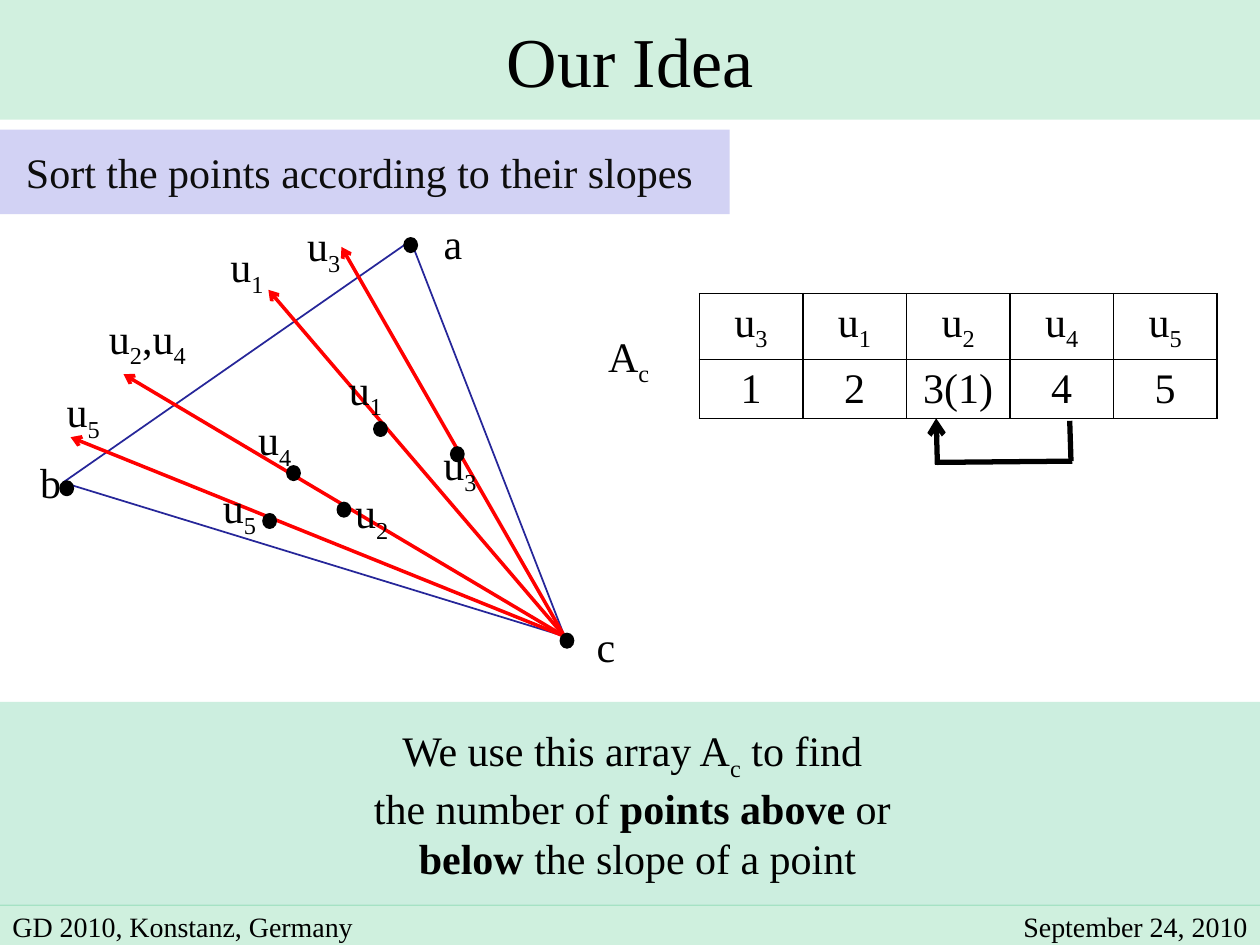
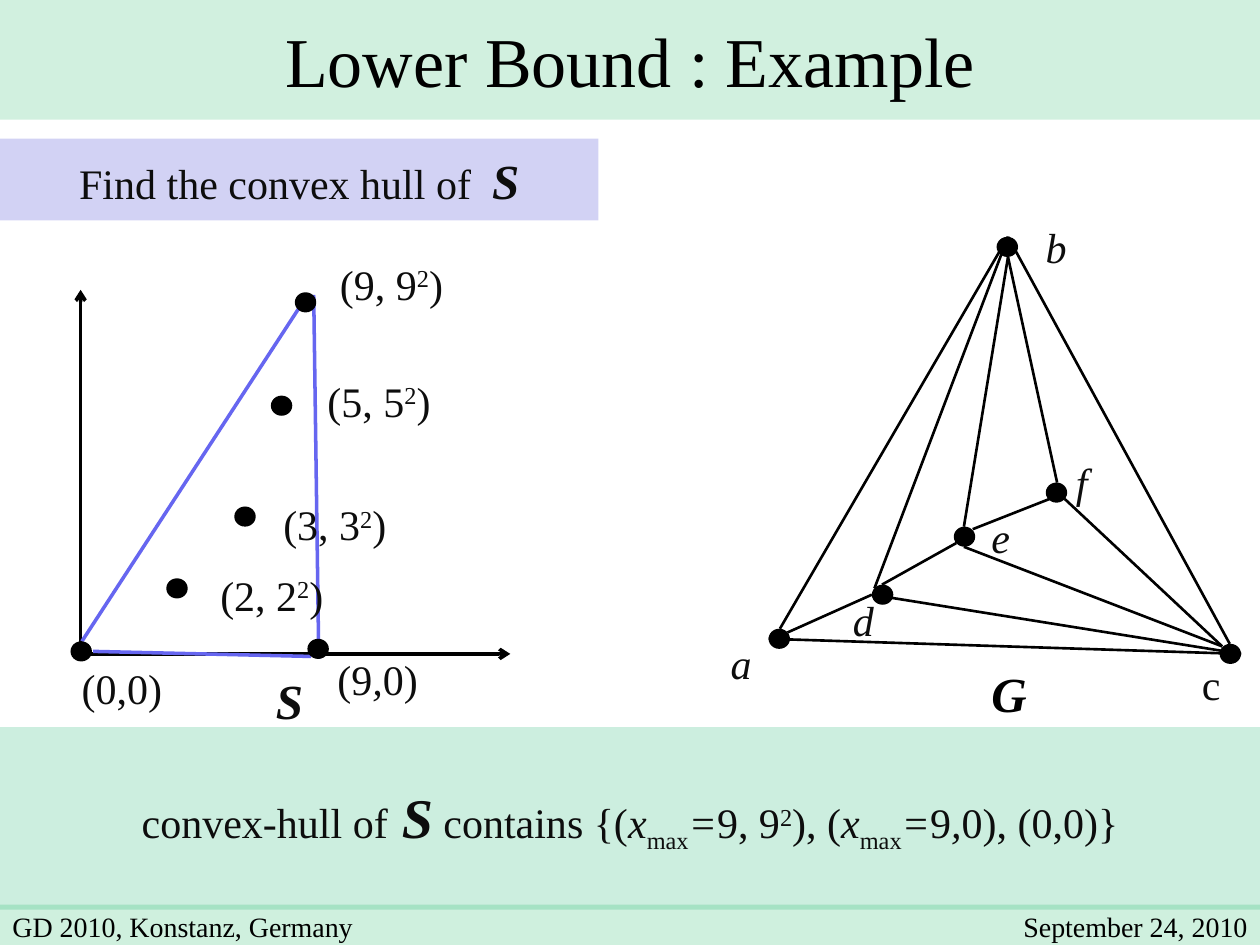
from lxml import etree
from pptx import Presentation
from pptx.dml.color import RGBColor
from pptx.enum.shapes import MSO_CONNECTOR, MSO_SHAPE
from pptx.enum.text import MSO_ANCHOR, MSO_AUTO_SIZE, PP_ALIGN
from pptx.oxml.ns import qn
from pptx.util import Emu, Inches, Pt

LEFT, CENTER, RIGHT = PP_ALIGN.LEFT, PP_ALIGN.CENTER, PP_ALIGN.RIGHT
TOP, MIDDLE = MSO_ANCHOR.TOP, MSO_ANCHOR.MIDDLE
FIT_SHAPE, NO_FIT = MSO_AUTO_SIZE.SHAPE_TO_FIT_TEXT, MSO_AUTO_SIZE.NONE
RECTANGLE, ELLIPSE = MSO_SHAPE.RECTANGLE, MSO_SHAPE.OVAL
STRAIGHT = MSO_CONNECTOR.STRAIGHT

COLORS = {
    "black": "000000",
    "ink": "0D0D0D",
    "green": "00B050",
    "mint": "CCEEDF",
    "lavender": "D2D2F4",
    "ray": "FF0000",
    "triangle": "262699",
    "hull": "6666F0",
}
FONT = "Times New Roman"
COLUMNS, ROWS = 100, 75
TITLE_ONLY = 5
BASELINES = {"_": "-25000", "^": "30000"}


def rgb(name):
    return RGBColor.from_string(COLORS[name])


def write_text(frame, text, size=24, big=28, color="black", align=CENTER,
               anchor=MIDDLE, wrap=True, fit=NO_FIT, italic=False, indent=0):
    """Fill a frame; newlines part paragraphs and | parts runs.

    A run may start with a mark: _ lowered, ^ raised, * bold, / italic,
    ! bold italic in the big size.
    """
    frame.word_wrap, frame.auto_size = wrap, fit
    frame.vertical_anchor = anchor
    for number, line in enumerate(text.split("\n")):
        paragraph = frame.add_paragraph() if number else frame.paragraphs[0]
        paragraph.alignment = align
        if indent:
            paragraph._p.get_or_add_pPr().set("marL", str(Inches(indent)))
        for piece in line.split("|"):
            mark = piece[0] if piece[0] in "_^*/!" else ""
            run = paragraph.add_run()
            run.text = piece[len(mark):]
            font = run.font
            font.name, font.size = FONT, Pt(big if mark == "!" else size)
            font.color.rgb = rgb(color)
            font.bold = mark in ("*", "!")
            font.italic = italic or mark in ("/", "!")
            if mark in BASELINES:
                run._r.get_or_add_rPr().set("baseline", BASELINES[mark])


def paint(shape, color, opacity=None):
    shape.fill.solid()
    shape.fill.fore_color.rgb = rgb(color)
    if opacity:
        tint = shape._element.spPr.find(qn("a:solidFill"))[0]
        etree.SubElement(tint, qn("a:alpha")).set("val", str(opacity * 1000))


class Deck:
    """Shared style plus the current slide; lengths are in grid cells."""

    def __init__(self):
        self.presentation = Presentation()
        self.presentation.slide_width = Inches(10)
        self.presentation.slide_height = Inches(7.5)
        self.column = self.presentation.slide_width / COLUMNS
        self.row = self.presentation.slide_height / ROWS
        self.slide = None

    def cells(self, *lengths):
        """Turn alternating column and row counts into EMU."""
        return [Emu(round(length * (self.row if i % 2 else self.column)))
                for i, length in enumerate(lengths)]

    def start_slide(self, title):
        layout = self.presentation.slide_layouts[TITLE_ONLY]
        self.slide = self.presentation.slides.add_slide(layout)
        heading = self.slide.shapes.title
        (heading.left, heading.top,
         heading.width, heading.height) = self.cells(0, 0, COLUMNS, 9.5)
        paint(heading, "green", 18)
        write_text(heading.text_frame, title, size=40, wrap=False)

    def footer(self):
        self.block(RECTANGLE, (0, 71.8, COLUMNS, 3.2), "green", opacity=19)
        self.label("GD 2010, Konstanz, Germany", 0, 71, 31.1, 5.1,
                   size=16, align=LEFT)
        self.label("September 24, 2010", 77.7, 71, 22.3, 5.1,
                   size=16, align=RIGHT)

    def block(self, kind, box, fill, opacity=None, outline=0):
        shape = self.slide.shapes.add_shape(kind, *self.cells(*box))
        shape.shadow.inherit = False
        paint(shape, fill, opacity)
        if outline:
            shape.line.color.rgb = rgb(fill)
            shape.line.width = Pt(outline)
        else:
            shape.line.fill.background()
        return shape

    def band(self, text, box, fill, **text_format):
        panel = self.block(RECTANGLE, box, fill)
        write_text(panel.text_frame, text, **text_format)

    def dots(self, corners, width, height, outline=0):
        for corner in corners:
            self.block(ELLIPSE, (*corner, width, height), "black",
                       outline=outline)

    def label(self, text, left, top, width, height, **text_format):
        box = self.slide.shapes.add_textbox(
            *self.cells(left, top, width, height))
        write_text(box.text_frame, text, **text_format)

    def tag(self, text, left, top, width, height=5.1, **text_format):
        """A one-line label that grows from its top left corner."""
        style = {"color": "ink", "align": LEFT, "anchor": TOP,
                 "wrap": False, "fit": FIT_SHAPE, **text_format}
        self.label(text, left, top, width, height, **style)

    def line(self, start, end, color="black", width=1.5, arrow=False):
        link = self.slide.shapes.add_connector(
            STRAIGHT, *self.cells(*start, *end))
        link.line.color.rgb = rgb(color)
        link.line.width = Pt(width)
        if arrow:
            stroke = link.line._get_or_add_ln()
            etree.SubElement(stroke, qn("a:tailEnd")).set("type", "arrow")
        etree.SubElement(link._element.spPr, qn("a:effectLst"))

    def polygon(self, corners, color, width):
        first, *others = [self.cells(*corner) for corner in corners]
        builder = self.slide.shapes.build_freeform(*first)
        builder.add_line_segments(others, close=True)
        outline = builder.convert_to_shape()
        outline.shadow.inherit = False
        outline.fill.background()
        outline.line.color.rgb = rgb(color)
        outline.line.width = Pt(width)

    def table(self, rows, left, top, width, heights):
        frame = self.slide.shapes.add_table(
            len(rows), len(rows[0]),
            *self.cells(left, top, width, sum(heights)))
        grid = frame.table
        grid.first_row = grid.horz_banding = False
        for row, height, texts in zip(grid.rows, heights, rows):
            row.height = self.cells(0, height)[1]
            for cell, text in zip(row.cells, texts):
                write_cell(cell, text)


def write_cell(cell, text):
    write_text(cell.text_frame, text)
    cell.vertical_anchor = TOP
    properties = cell._tc.get_or_add_tcPr()
    for side in ("lnL", "lnR", "lnT", "lnB"):
        border = etree.SubElement(properties, qn(f"a:{side}"))
        border.set("w", str(Pt(1)))
        fill = etree.SubElement(border, qn("a:solidFill"))
        etree.SubElement(fill, qn("a:srgbClr")).set("val", COLORS["black"])
    cell.fill.background()


def build_idea(deck):
    deck.start_slide("Our Idea")
    apex = (44.8, 50.5)
    deck.polygon([(5, 38.3), (32.6, 19.1), apex], "triangle", 1)
    for ray_end in [(27.1, 19.6), (9.8, 29.7), (5.6, 34.7), (21.3, 23)]:
        deck.line(apex, ray_end, "ray", 2, arrow=True)
    deck.dots([(32.1, 18.9), (44.5, 50.3), (4.8, 38.2), (22.8, 37),
               (35.8, 35.5), (20.9, 40.8), (29.7, 33.5), (26.8, 39.9)],
              1, 1.1, outline=1.25)

    point_labels = [(1, 26.4, 29.4), (2, 26.9, 39.2), (3, 33.9, 35.4),
                    (4, 19.2, 33.4), (5, 16.4, 38.8)]
    ray_labels = [(1, 17, 19.7), (5, 4, 31.2), (3, 23.1, 18)]
    for index, left, top in point_labels + ray_labels:
        deck.label(f"u|_{index}", left, top, 5.2, 3.4)
    deck.label("u|_2|,u|_4", 6.9, 24.5, 9.6, 5.1)
    deck.label("a", 34.3, 18.3, 1.9, 1.9)
    deck.label("b", 2.2, 37.3, 2, 1.9)
    deck.label("c", 46.1, 50, 4, 2.5)

    deck.label("A|_c", 44.5, 23.4, 10.8, 10.2)
    deck.table([[f"u|_{index}" for index in (3, 1, 2, 4, 5)],
                ["1", "2", "3(1)", "4", "5"]],
               55.5, 23.3, 41.1, (5.2, 4.7))
    deck.line((74.4, 36.7), (85.1, 36.6), width=3)
    deck.line((85, 36.6), (84.9, 33.4), width=3)
    deck.line((74.4, 36.9), (74.3, 33.2), width=3, arrow=True)

    deck.band("Sort the points according to their slopes ",
              (0, 10.3, 57.9, 6.7), "lavender", color="ink")
    deck.band("We use this array A|_c| to find \n"
              "the number of |*points above| or \n"
              "*below| the slope of a point",
              (0, 55.7, COLUMNS, 16.2), "mint", indent=0.12)
    deck.footer()


def build_example(deck):
    deck.start_slide("Lower Bound : Example")

    top_b, near_c, at_c = (80, 18.8), (97, 51.3), (98.5, 51.9)
    below_b, at_d = (80, 20.4), (69.2, 47.2)
    edges = [
        ((84.5, 39.6), near_c), ((76.5, 43.4), near_c),
        (at_d, at_c), ((61, 50.7), at_c),
        ((61.9, 49.9), top_b), ((69.4, 46.7), top_b), ((97.6, 51.1), top_b),
        ((76.5, 41.8), below_b), ((83.9, 38.3), below_b),
        ((77.2, 42), (83.3, 39.6)), ((70, 46.4), (75.9, 43.1)),
        ((62.5, 50.2), at_d),
    ]
    for start, end in edges:
        deck.line(start, end)
    for name, left, top in [("a", 57, 50.1), ("b", 82, 17.1),
                            ("d", 66.7, 46.7), ("e", 77.7, 40.1),
                            ("f", 84.4, 35.7)]:
        deck.tag(name, left, top, 3 if name == "f" else 3.7, italic=True)
    deck.tag("c", 94.4, 51.8, 3.5)
    deck.tag("!G| ", 77.7, 52.2, 5.7, 5.7, color="black")
    deck.tag("!S| ", 20.9, 52.7, 5.1, 5.7)

    deck.line((6.4, 52.4), (6.4, 23), width=2, arrow=True)
    deck.line((6.1, 51.9), (40.5, 51.9), width=2, arrow=True)
    for start, end in [((23.7, 24.5), (6.5, 50.9)),
                       ((25.3, 52.3), (24.9, 23.4)),
                       ((24.7, 52.1), (7.4, 51.7))]:
        deck.line(start, end, "hull", 2)

    graph_vertices = [(61, 49.9), (69.2, 46.4), (75.7, 41.8),
                      (83, 38.3), (96.8, 51.1), (79.1, 18.8)]
    plotted_points = [(5.6, 50.9), (13.2, 45.9), (18.6, 40.2),
                      (21.5, 31.4), (23.4, 23.2), (24.4, 50.7)]
    deck.dots(graph_vertices + plotted_points, 1.7, 1.6)
    for value, left, top, width in [(2, 16.5, 44.7, 11.3),
                                    (3, 21.5, 39.1, 10.4),
                                    (5, 25, 29.3, 11.3),
                                    (9, 26, 20, 10.4)]:
        deck.tag(f"({value}, {value}|^2|)", left, top, width)
    deck.tag("(0,0)", 5.5, 52.1, 9.3)
    deck.tag("(9|/,|0)", 25.8, 51.4, 8.5)

    deck.band("convex-hull of|! S| contains {(|/x|_max|/=|9, 9|^2|), ("
              "|/x|_max|/=|9|/,|0), (0,0)}",
              (0, 57.7, COLUMNS, 14.5), "mint", color="ink", big=32)
    deck.band("Find the convex hull of  |!S", (0, 11, 47.5, 6.5),
              "lavender", color="ink")
    deck.footer()


def main():
    deck = Deck()
    build_idea(deck)
    build_example(deck)
    deck.presentation.save("out.pptx")


if __name__ == "__main__":
    main()
